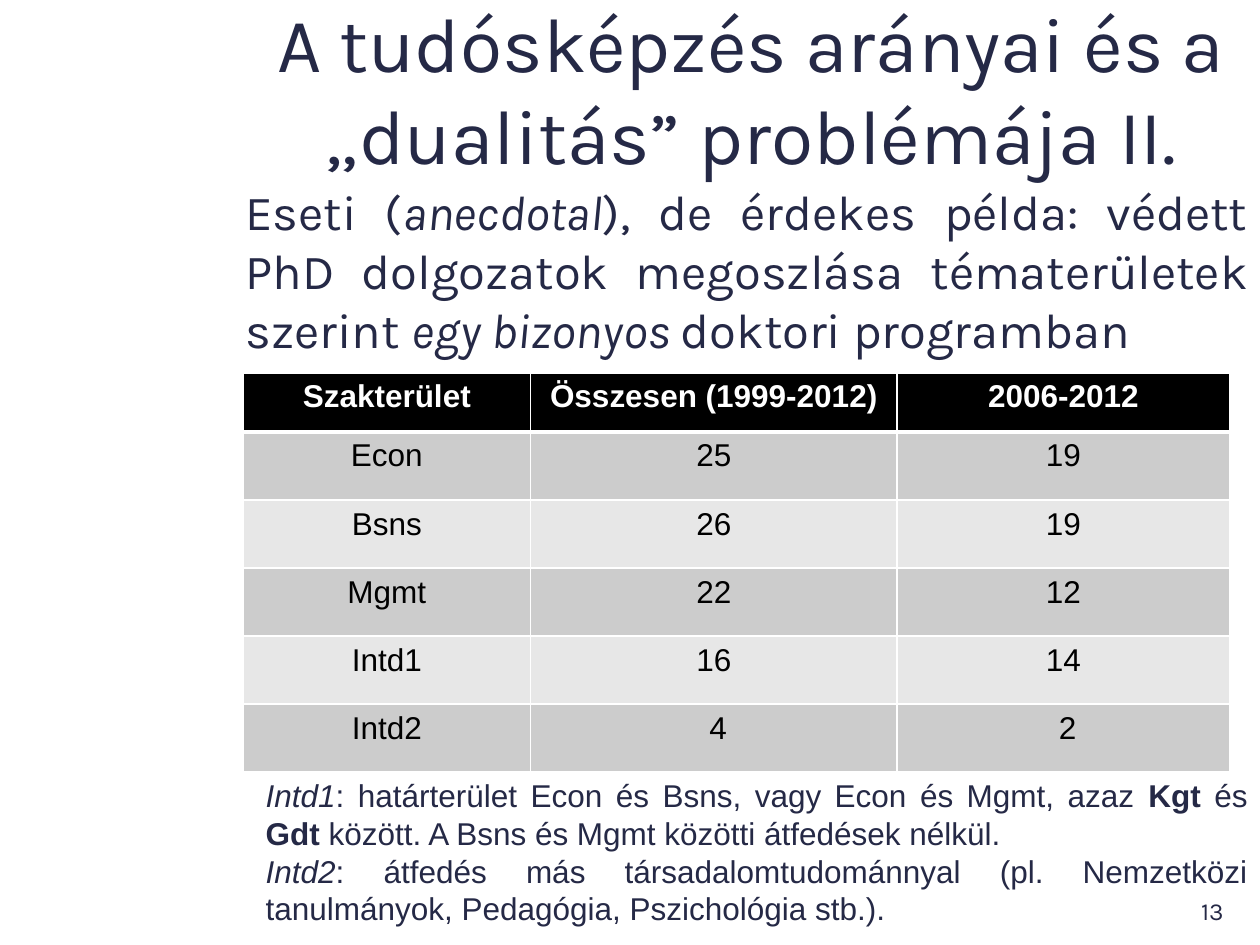
from typing import NamedTuple

from lxml import etree
from pptx import Presentation
from pptx.dml.color import RGBColor
from pptx.enum.text import MSO_ANCHOR, PP_ALIGN
from pptx.oxml.ns import qn
from pptx.util import Inches, Pt

CENTER, RIGHT, JUSTIFY = PP_ALIGN.CENTER, PP_ALIGN.RIGHT, PP_ALIGN.JUSTIFY
TOP, MIDDLE = MSO_ANCHOR.TOP, MSO_ANCHOR.MIDDLE

NAVY = RGBColor(0x25, 0x29, 0x46)
BLACK = RGBColor(0x00, 0x00, 0x00)
WHITE = RGBColor(0xFF, 0xFF, 0xFF)
DARK_BAND = RGBColor(0xCC, 0xCC, 0xCC)
LIGHT_BAND = RGBColor(0xE7, 0xE7, 0xE7)

PLAIN, ITALIC, BOLD = {}, {"italic": True}, {"bold": True}


class Run(NamedTuple):
    text: str
    style: dict = PLAIN


class TextBlock(NamedTuple):
    left: float
    top: float
    width: float
    height: float
    font: str
    size: int
    align: PP_ALIGN
    paragraphs: list[list[Run]]
    anchor: MSO_ANCHOR = TOP


TITLE = TextBlock(1.93, 0, 8.07, 1.39, "Karla", 44, CENTER, [
    [Run("A tudósképzés arányai és a „dualitás” problémája II.")],
], MIDDLE)
INTRO = TextBlock(1.85, 1.39, 8.15, 1.52, "Karla", 28, JUSTIFY, [
    [Run("Eseti ("), Run("anecdotal", ITALIC),
     Run("), de érdekes példa: védett PhD dolgozatok megoszlása "
         "tématerületek szerint "),
     Run("egy bizonyos ", ITALIC), Run("doktori programban")],
])
FIELD_NOTES = TextBlock(2.01, 6.11, 7.99, 1.31, "Arial", 18, JUSTIFY, [
    [Run("Intd1", ITALIC),
     Run(": határterület Econ és Bsns, vagy Econ és Mgmt, azaz "),
     Run("Kgt", BOLD), Run(" és "), Run("Gdt", BOLD),
     Run(" között. A Bsns és Mgmt közötti átfedések nélkül.")],
    [Run("Intd2", ITALIC),
     Run(": átfedés más társadalomtudománnyal (pl. Nemzetközi "
         "tanulmányok, Pedagógia, Pszichológia stb.).")],
])
PAGE_NUMBER = TextBlock(7.17, 7.06, 2.64, 0.29, "Karla", 14, RIGHT,
                        [[Run("13")]])

DISSERTATIONS = [
    ("Szakterület", "Összesen (1999-2012)", "2006-2012"),
    ("Econ", "25", "19"),
    ("Bsns", "26", "19"),
    ("Mgmt", "22", "12"),
    ("Intd1", "16", "14"),
    ("Intd2", " 4", " 2"),
]
COLUMN_WIDTHS = (2.28, 2.91, 2.64)
HEADER_HEIGHT, ROW_HEIGHT = 0.47, 0.54


def add_run(paragraph, run: Run, font: str, size: int, color: RGBColor) -> None:
    piece = paragraph.add_run()
    piece.text = run.text
    piece.font.color.rgb = color
    formats = {"name": font, "size": Pt(size), "bold": False, "italic": False}
    for attribute, value in (formats | run.style).items():
        setattr(piece.font, attribute, value)


def add_text(slide, block: TextBlock) -> None:
    frame = slide.shapes.add_textbox(
        Inches(block.left), Inches(block.top),
        Inches(block.width), Inches(block.height)).text_frame
    frame.word_wrap = True
    frame.vertical_anchor = block.anchor
    for index, runs in enumerate(block.paragraphs):
        paragraph = frame.add_paragraph() if index else frame.paragraphs[0]
        paragraph.alignment = block.align
        for run in runs:
            add_run(paragraph, run, block.font, block.size, NAVY)


def set_borders(cell, widths: dict[str, int]) -> None:
    """Draw white borders; they must come before the fill in the cell."""
    properties = cell._tc.get_or_add_tcPr()
    for index, (side, width) in enumerate(widths.items()):
        line = etree.Element(qn(f"a:ln{side}"), w=str(Pt(width)))
        fill = etree.SubElement(line, qn("a:solidFill"))
        etree.SubElement(fill, qn("a:srgbClr"), val=str(WHITE))
        properties.insert(index, line)


def add_dissertation_table(slide) -> None:
    row_count = len(DISSERTATIONS)
    height = HEADER_HEIGHT + (row_count - 1) * ROW_HEIGHT
    table = slide.shapes.add_table(
        row_count, len(COLUMN_WIDTHS), Inches(1.93), Inches(2.96),
        Inches(sum(COLUMN_WIDTHS)), Inches(height)).table
    for column, width in zip(table.columns, COLUMN_WIDTHS):
        column.width = Inches(width)
    for r, values in enumerate(DISSERTATIONS):
        is_header = r == 0
        table.rows[r].height = Inches(HEADER_HEIGHT if is_header else ROW_HEIGHT)
        band = BLACK if is_header else DARK_BAND if r % 2 else LIGHT_BAND
        borders = {"L": 1, "R": 1, "T": 3 if r == 1 else 1,
                   "B": 3 if is_header else 1}
        for c, value in enumerate(values):
            cell = table.cell(r, c)
            cell.fill.solid()
            cell.fill.fore_color.rgb = band
            set_borders(cell, borders)
            paragraph = cell.text_frame.paragraphs[0]
            paragraph.alignment = CENTER
            add_run(paragraph, Run(value, BOLD if is_header else PLAIN),
                    "Arial", 18, WHITE if is_header else BLACK)


def main() -> None:
    presentation = Presentation()
    presentation.slide_width = Inches(10)
    presentation.slide_height = Inches(7.5)
    slide = presentation.slides.add_slide(presentation.slide_layouts[6])

    # Title, table, then the texts around it
    add_text(slide, TITLE)
    add_dissertation_table(slide)
    for block in (PAGE_NUMBER, INTRO, FIELD_NOTES):
        add_text(slide, block)

    presentation.save("out.pptx")


if __name__ == "__main__":
    main()
